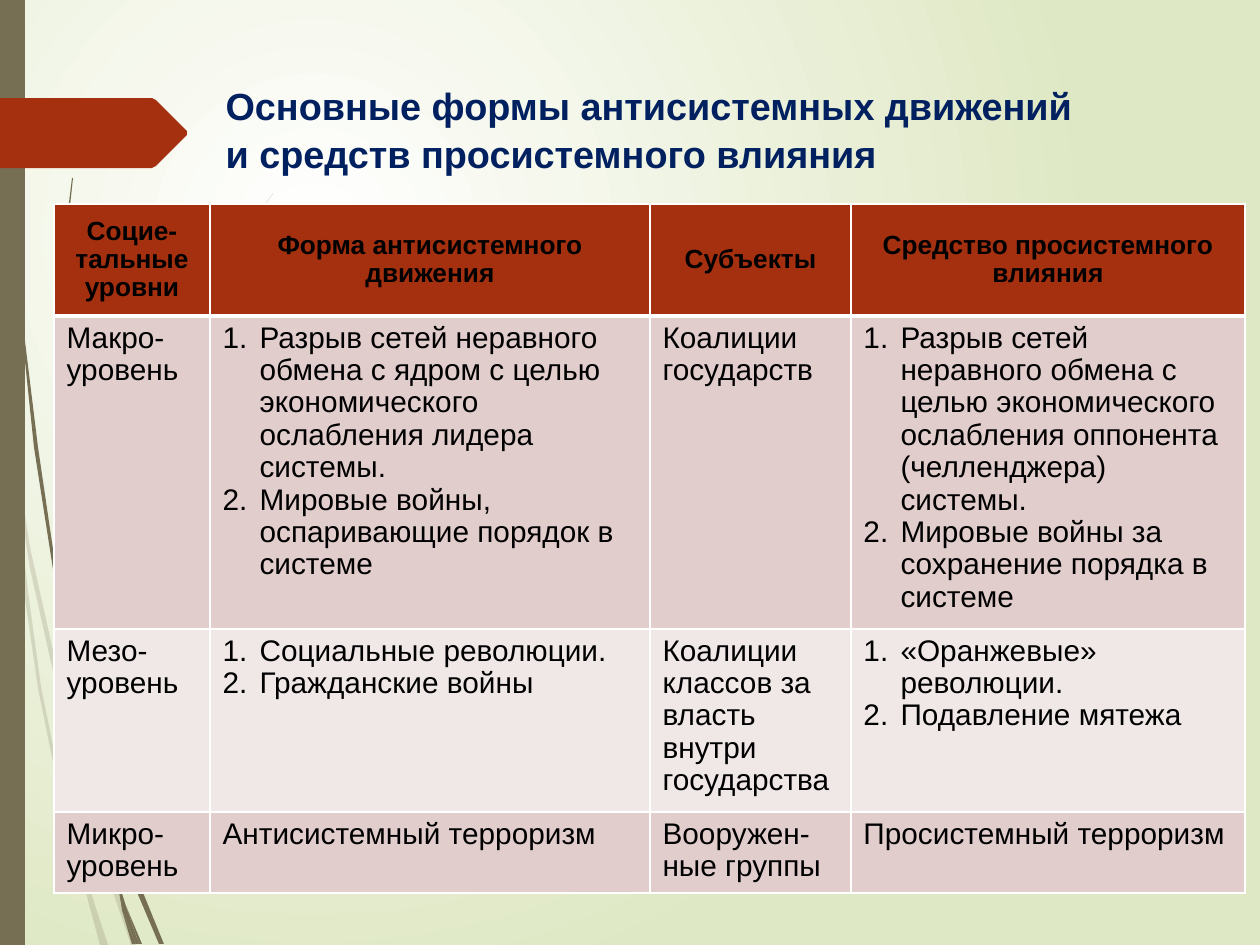
import pptx
import pptx.dml.color
import pptx.enum.shapes
import pptx.enum.text
import pptx.oxml
import pptx.oxml.ns
import pptx.util

SCALE = 914400 / 126  # EMU in one px
MIDDLE = pptx.enum.text.MSO_ANCHOR.MIDDLE
CENTER = pptx.enum.text.PP_ALIGN.CENTER
LEFT = pptx.enum.text.PP_ALIGN.LEFT


class Theme:
    olive, rust, navy = "766F54", "A53010", "002060"
    white, black, backdrop = "FFFFFF", "000000", "DFE8C4"
    bands = ("E1CDCC", "F0E8E7")
    title = {"size": pptx.util.Pt(21.6), "bold": True, "name": "Arial"}
    header = {"size": pptx.util.Pt(15), "bold": True, "name": "Arial"}
    body = {"size": pptx.util.Pt(17), "bold": False, "name": "Arial"}


# Outlines of the grass blades, relative to the slide corner
PALE_BLADES = [
    [(50, 658), (74, 755), (74, 738), (54, 655), (30, 547), (13, 435), (15, 474), (30, 568)],
    [(81, 861), (60, 780), (41, 686), (28, 591), (15, 474), (10, 441), (24, 592),
     (38, 688), (57, 782), (81, 873), (88, 900), (87, 891)],
    [(81, 765), (77, 751), (77, 769), (107, 874), (131, 945), (136, 945), (111, 872)],
    [(105, 945), (108, 945), (92, 896)],
    [(88, 900), (100, 945), (103, 945)],
    [(84, 872), (82, 861), (87, 891), (88, 900), (103, 945), (105, 945), (92, 896)],
    [(77, 736), (96, 582), (140, 440), (200, 309), (236, 249), (253, 221), (273, 194),
     (273, 193), (253, 220), (234, 248), (199, 307), (139, 438), (95, 581), (74, 736)],
]
DARK_BLADES = [
    [(6, 139), (18, 294), (34, 447), (58, 601), (59, 606), (57, 576), (38, 447),
     (19, 292), (8, 137), (5, 60), (4, 0), (3, 0), (4, 60)],
    [(63, 595), (60, 571), (55, 440), (60, 309), (66, 243), (73, 178),
     (72, 178), (64, 243), (59, 309), (54, 440), (57, 566), (62, 595)],
    [(118, 818), (115, 808), (115, 827), (137, 892), (159, 944), (164, 944), (142, 890)],
    [(139, 944), (142, 944), (126, 906)],
    [(122, 910), (132, 944), (136, 944)],
    [(121, 890), (115, 871), (121, 903), (122, 910), (136, 944), (139, 944), (126, 906)],
]

COLUMNS = (156, 440, 201, 394)
ROWS = (112, 313, 183, 81)
# A list in a cell becomes a numbered list
LEVELS = [
    ["Социе-тальные уровни", "Форма антисистемного движения",
     "Субъекты", "Средство просистемного влияния"],
    ["Макро-уровень",
     ["Разрыв сетей неравного обмена с ядром с целью экономического ослабления лидера системы.",
      "Мировые войны, оспаривающие порядок в системе"],
     "Коалиции государств",
     ["Разрыв сетей неравного обмена с целью экономического ослабления оппонента "
      "(челленджера) системы.",
      "Мировые войны за сохранение порядка в системе"]],
    ["Мезо-уровень", ["Социальные революции.", "Гражданские войны"],
     "Коалиции классов за власть внутри государства",
     ["«Оранжевые» революции.", "Подавление мятежа"]],
    ["Микро-уровень", "Антисистемный терроризм",
     "Вооружен-ные группы", "Просистемный терроризм"],
]


def px(length):
    return pptx.util.Emu(round(length * SCALE))


def rgb(color):
    return pptx.dml.color.RGBColor.from_string(color)


def xml(markup):
    tag, rest = markup.split(" ", 1)
    return pptx.oxml.parse_xml(f"{tag} {pptx.oxml.ns.nsdecls('a')} {rest}")


def style_text(paragraph, font_format, color):
    for run in paragraph.runs:
        for attribute, value in font_format.items():
            setattr(run.font, attribute, value)
        run.font.color.rgb = rgb(color)


def paint(shape, color):
    shape.fill.solid()
    shape.fill.fore_color.rgb = rgb(color)
    shape.line.fill.background()
    shape.shadow.inherit = False


def outline(shapes, left, top, points, color):
    start, *rest = [(left + x, top + y) for x, y in points]
    builder = shapes.build_freeform(*start, scale=SCALE)
    builder.add_line_segments(rest)
    form = builder.convert_to_shape()
    paint(form, color)
    return form


def add_backdrop(slide):
    fill = slide.background.fill
    fill.gradient()
    for stop, color in zip(fill.gradient_stops, (Theme.white, Theme.backdrop)):
        stop.color.rgb = rgb(color)
    linear = slide.element.find(".//" + pptx.oxml.ns.qn("a:lin"))
    linear.getparent().replace(linear, xml(
        '<a:path path="circle">'
        '<a:fillToRect l="50000" t="50000" r="100000" b="100000"/></a:path>'))


def add_side_decor(slide, left, top, height):
    # Grass blades: a pale group behind a dark one
    for blades, opacity in ((PALE_BLADES, 20), (DARK_BLADES, 100)):
        grass = slide.shapes.add_group_shape()
        for points in blades:
            blade = outline(grass.shapes, left, top, points, Theme.olive)
            if opacity < 100:
                tint = blade.element.find(".//" + pptx.oxml.ns.qn("a:srgbClr"))
                tint.append(xml(f'<a:alpha val="{opacity * 1000}"/>'))
    # Side bar and pointer
    bar = slide.shapes.add_shape(pptx.enum.shapes.MSO_SHAPE.RECTANGLE,
                                 px(left), px(top), px(25), px(height))
    paint(bar, Theme.olive)
    pointer = [(0, 0), (152, 0), (156, 2), (187, 33), (187, 37), (156, 68), (152, 70), (0, 70)]
    outline(slide.shapes, left, top + 98, pointer, Theme.rust)


def add_title(slide, left, top, width, height):
    title = slide.shapes.title
    box = {"left": left, "top": top, "width": width, "height": height}
    for side, length in box.items():
        setattr(title, side, px(length))
    frame = title.text_frame
    frame.text = "Основные формы антисистемных движений\vи средств просистемного влияния"
    frame.vertical_anchor = MIDDLE
    frame.auto_size = pptx.enum.text.MSO_AUTO_SIZE.NONE
    frame.word_wrap = True
    heading = frame.paragraphs[0]
    heading.alignment = LEFT
    heading.line_spacing = 1.05
    style_text(heading, Theme.title, Theme.navy)


def fill_cell(cell, content, is_header, color):
    # Borders, then fill
    properties = cell._tc.get_or_add_tcPr()
    for side in "LRTB":
        weight = 3 if is_header and side == "B" else 1
        properties.append(xml(
            f'<a:ln{side} w="{weight * 12700}"><a:solidFill>'
            f'<a:srgbClr val="{Theme.white}"/></a:solidFill></a:ln{side}>'))
    cell.fill.solid()
    cell.fill.fore_color.rgb = rgb(color)
    # Text
    numbered = isinstance(content, list)
    cell.text = "\n".join(content) if numbered else content
    if is_header:
        cell.vertical_anchor = MIDDLE
    for paragraph in cell.text_frame.paragraphs:
        paragraph.alignment = CENTER if is_header else LEFT
        paragraph.line_spacing = 0.97
        style_text(paragraph, Theme.header if is_header else Theme.body, Theme.black)
        if numbered:
            layout = paragraph._p.get_or_add_pPr()
            layout.set("marL", str(px(37)))
            layout.set("indent", str(px(-37)))
            layout.append(xml('<a:buAutoNum type="arabicPeriod"/>'))


def add_levels_table(slide, left, top):
    table = slide.shapes.add_table(len(ROWS), len(COLUMNS), px(left), px(top),
                                   px(sum(COLUMNS)), px(sum(ROWS))).table
    table.horz_banding = False
    for column, width in zip(table.columns, COLUMNS):
        column.width = px(width)
    for index, (row, height) in enumerate(zip(table.rows, ROWS)):
        row.height = px(height)
        color = Theme.bands[(index - 1) % 2] if index else Theme.rust
        for cell, content in zip(row.cells, LEVELS[index]):
            fill_cell(cell, content, index == 0, color)


def main():
    deck = pptx.Presentation()
    deck.slide_width, deck.slide_height = px(1260), px(945)
    slide = deck.slides.add_slide(deck.slide_layouts[5])
    add_backdrop(slide)
    add_side_decor(slide, 0, 0, 945)
    add_title(slide, 213, 76, 942, 105)
    add_levels_table(slide, 54, 204)
    deck.save("out.pptx")


if __name__ == "__main__":
    main()
